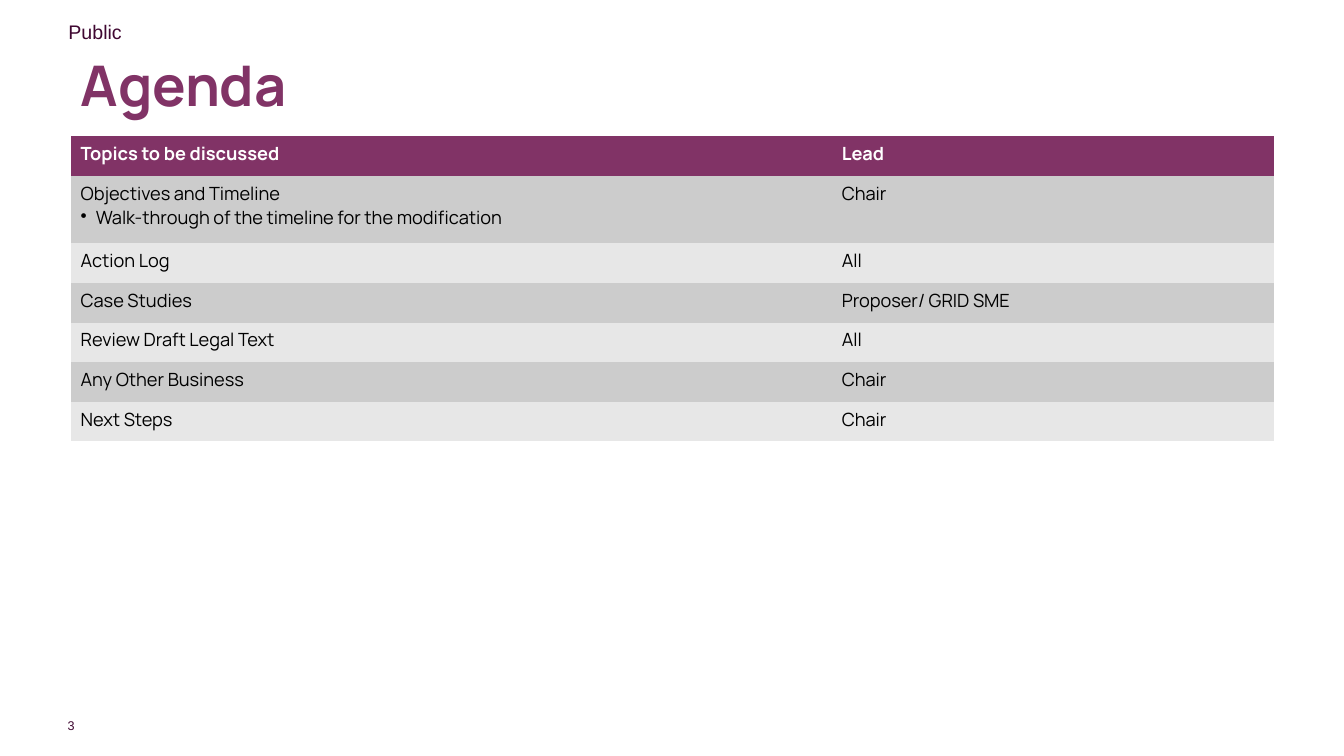
import pptx
import pptx.util
import pptx.dml.color
import pptx.enum.text
from lxml import etree

Inches, Pt = pptx.util.Inches, pptx.util.Pt
ALIGN, ANCHOR = pptx.enum.text.PP_ALIGN, pptx.enum.text.MSO_ANCHOR

# Content: each cell lists its paragraphs, bullets start with "• "
AGENDA = [
    (["Topics to be discussed"], ["Lead"]),
    (["Objectives and Timeline",
      "• Walk-through of the timeline for the modification"], ["Chair"]),
    (["Action Log"], ["All"]),
    (["Case Studies"], ["Proposer/ GRID SME"]),
    (["Review Draft Legal Text"], ["All"]),
    (["Any Other Business"], ["Chair"]),
    (["Next Steps"], ["Chair"]),
]
COLORS = {"plum": "813366", "dark": "3F0731", "white": "FFFFFF",
          "black": "000000", "odd": "CCCCCC", "even": "E7E7E7"}

# Layout in inches
WIDTH, HEIGHT = 13.33, 7.5
LEFT, TOP, TABLE_W, TABLE_H = 0.7, 1.35, 11.94, 3.03
TOPIC_W, TALL_ROW, BULLET_INDENT = 7.55, 0.67, 0.15
ROW = (TABLE_H - TALL_ROW) / (len(AGENDA) - 1)


def rgb(name):
    return pptx.dml.color.RGBColor.from_string(COLORS[name])


def write(tf, lines, size, color, font="Manrope", bold=False,
          align=ALIGN.LEFT, spacing=None):
    for i, line in enumerate(lines):
        p = tf.paragraphs[0] if i == 0 else tf.add_paragraph()
        p.alignment = align
        if spacing:
            p.line_spacing = spacing
        if line.startswith("• "):
            line = line[2:]
            pPr = p._p.get_or_add_pPr()
            pPr.set("marL", str(Inches(BULLET_INDENT)))
            pPr.set("indent", str(-Inches(BULLET_INDENT)))
            bullet = etree.SubElement(pPr, pptx.oxml.ns.qn("a:buChar"))
            bullet.set("char", "•")
        r = p.add_run()
        r.text = line
        r.font.name, r.font.size, r.font.bold = font, Pt(size), bold
        r.font.color.rgb = rgb(color)


def text_box(slide, box, text, size, color, anchor=ANCHOR.TOP, wrap=True,
             inset=True, **fmt):
    tf = slide.shapes.add_textbox(*map(Inches, box)).text_frame
    tf.word_wrap, tf.vertical_anchor = wrap, anchor
    if not inset:
        tf.margin_left = tf.margin_right = 0
        tf.margin_top = tf.margin_bottom = 0
    write(tf, [text], size, color, **fmt)


prs = pptx.Presentation()
prs.slide_width, prs.slide_height = Inches(WIDTH), Inches(HEIGHT)
s = prs.slides.add_slide(prs.slide_layouts[6])

# Page number, marking and title
text_box(s, (0.59, 7.12, 0.15, 0.15), "3", 9, "dark", anchor=ANCHOR.MIDDLE,
         wrap=False, inset=False, font="Arial", align=ALIGN.RIGHT)
text_box(s, (0.58, 0.15, 5, 0.34), "Public", 14, "dark", font="Arial")
text_box(s, (LEFT, 0.4, 10.62, 0.95), "Agenda", 40, "plum",
         anchor=ANCHOR.MIDDLE, bold=True, spacing=0.9)

# Agenda table
table = s.shapes.add_table(len(AGENDA), 2, Inches(LEFT), Inches(TOP),
                           Inches(TABLE_W), Inches(TABLE_H)).table
table.columns[0].width = Inches(TOPIC_W)
table.columns[1].width = Inches(TABLE_W - TOPIC_W)
for i, row in enumerate(AGENDA):
    header = i == 0
    table.rows[i].height = Inches(TALL_ROW if len(row[0]) > 1 else ROW)
    fill = "plum" if header else "odd" if i % 2 else "even"
    for j, lines in enumerate(row):
        cell = table.cell(i, j)
        cell.fill.solid()
        cell.fill.fore_color.rgb = rgb(fill)
        # Borders off, so the bands meet
        for side in ("a:lnL", "a:lnR", "a:lnT", "a:lnB"):
            ln = etree.Element(pptx.oxml.ns.qn(side), w="0")
            etree.SubElement(ln, pptx.oxml.ns.qn("a:noFill"))
            tcPr = cell._tc.get_or_add_tcPr()
            tcPr.insert(len(tcPr) - 1, ln)
        write(cell.text_frame, lines, 13, "white" if header else "black",
              bold=header)

prs.save("out.pptx")
